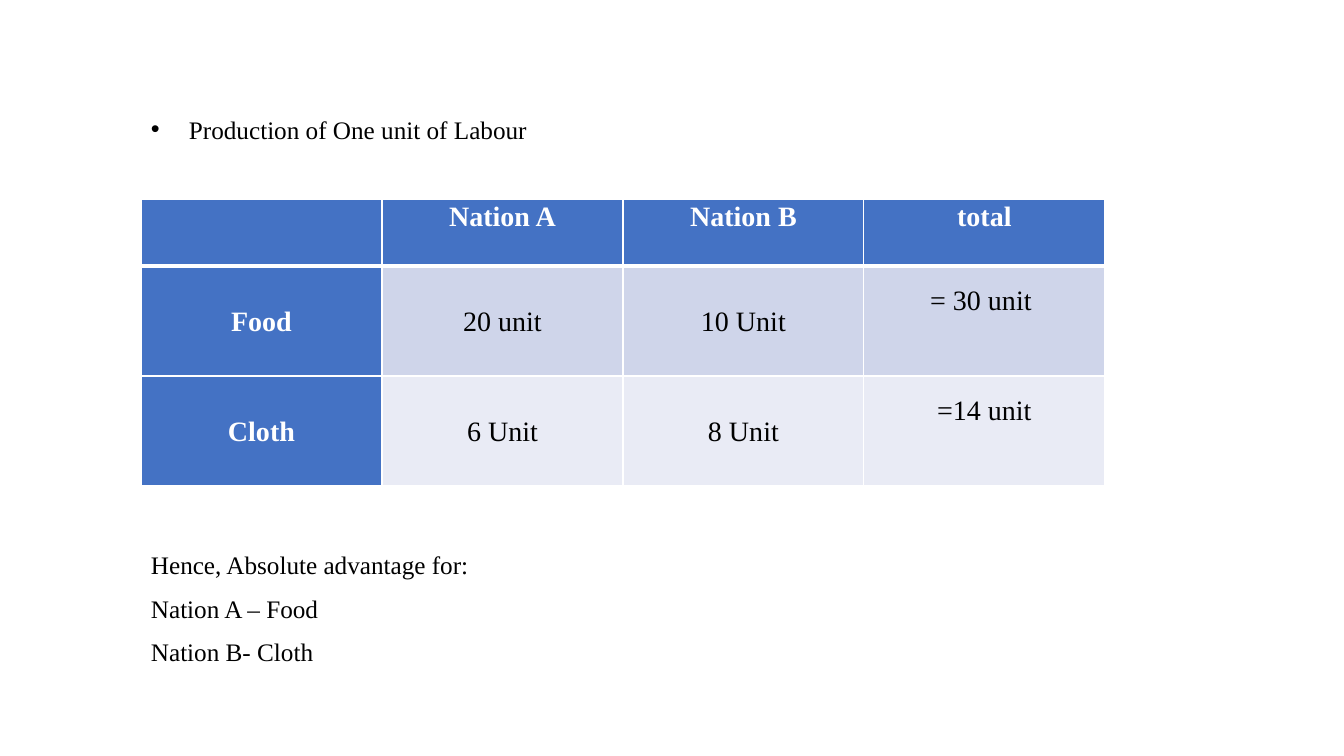
from lxml.etree import SubElement
from pptx import Presentation
from pptx.dml.color import RGBColor
from pptx.enum.text import MSO_ANCHOR, PP_ALIGN
from pptx.oxml.ns import qn
from pptx.util import Emu, Pt

BLUE, WHITE, BLACK = "4472C4", "FFFFFF", "000000"
BANDS = ["CFD5EA", "E9EBF5"]


def px(n):
    return Emu(round(n * 914400 / 100.8))


def color(text):
    return RGBColor.from_string(text)


class Page:
    font = "Times New Roman"

    def __init__(self, deck):
        self.slide = deck.slides.add_slide(deck.slide_layouts[6])

    def label(self, para, text, size, ink=BLACK, bold=False):
        para.line_spacing = 1.07
        para.space_after = Pt(8)
        run = para.add_run()
        run.text = text
        run.font.name = self.font
        run.font.size = Pt(size)
        run.font.bold = bold
        run.font.color.rgb = color(ink)

    def bullet(self, para, indent):
        props = para._p.get_or_add_pPr()
        props.set("marL", str(px(indent)))
        props.set("indent", str(-px(indent)))
        SubElement(props, qn("a:buFont"), typeface="Arial")
        SubElement(props, qn("a:buChar"), char="•")

    def box(self, left, top, width, height):
        frame = self.slide.shapes.add_textbox(
            px(left), px(top), px(width), px(height)).text_frame
        frame.word_wrap = True
        return frame

    def grid(self, left, top, cols, rows):
        shape = self.slide.shapes.add_table(
            len(rows), len(cols), px(left), px(top), px(sum(cols)), px(sum(rows)))
        table = shape.table
        table.horz_banding = False
        for col, width in zip(table.columns, cols):
            col.width = px(width)
        for row, height in zip(table.rows, rows):
            row.height = px(height)
        return table

    def edge(self, cell, side, width):
        line = SubElement(cell._tc.get_or_add_tcPr(), qn("a:ln" + side),
                          w=str(Pt(width)))
        fill = SubElement(line, qn("a:solidFill"))
        SubElement(fill, qn("a:srgbClr"), val=WHITE)

    def cell(self, cell, text, fill, edges, head, anchor, right=7, bottom=0):
        for side, width in edges.items():
            self.edge(cell, side, width)
        cell.fill.solid()
        cell.fill.fore_color.rgb = color(fill)
        cell.margin_left, cell.margin_right = px(7), px(right)
        cell.margin_top, cell.margin_bottom = 0, px(bottom)
        cell.vertical_anchor = anchor
        if text:
            para = cell.text_frame.paragraphs[0]
            para.alignment = PP_ALIGN.CENTER
            self.label(para, text, 20, WHITE if head else BLACK, head)


def main():
    deck = Presentation()
    deck.slide_width, deck.slide_height = px(1344), px(756)
    page = Page(deck)

    # Heading and conclusion, with room for the table between them
    lines = ["Production of One unit of Labour", "Hence, Absolute advantage for:",
             "Nation A – Food", "Nation B- Cloth"]
    frame = page.box(141, 107, 1119, 613)
    for i, text in enumerate(lines):
        para = frame.add_paragraph() if i else frame.paragraphs[0]
        page.label(para, text, 18)
        if i == 0:
            page.bullet(para, 38)
        elif i == 1:
            para.space_before = Pt(280)

    # Production table
    data = [["", "Nation A", "Nation B", "total"],
            ["Food", "20 unit", "10 Unit", "= 30 unit"],
            ["Cloth", "6 Unit", "8 Unit", "=14 unit"]]
    table = page.grid(141, 199, [241] * 4, [67, 110, 110])
    for r, row in enumerate(data):
        edges = {"L": 1, "R": 1, "T": 3 if r == 1 else 1, "B": 1 if r else 3}
        for c, text in enumerate(row):
            head = r == 0 or c == 0
            fill = BLUE if head else BANDS[r - 1]
            anchor = MSO_ANCHOR.MIDDLE if r else MSO_ANCHOR.TOP
            # Totals sit above the middle of their cells
            lift = 42 if r and c == 3 else 0
            right = 14 if text == "= 30 unit" else 7
            page.cell(table.cell(r, c), text, fill, edges, head, anchor, right, lift)

    deck.save("out.pptx")


if __name__ == "__main__":
    main()
